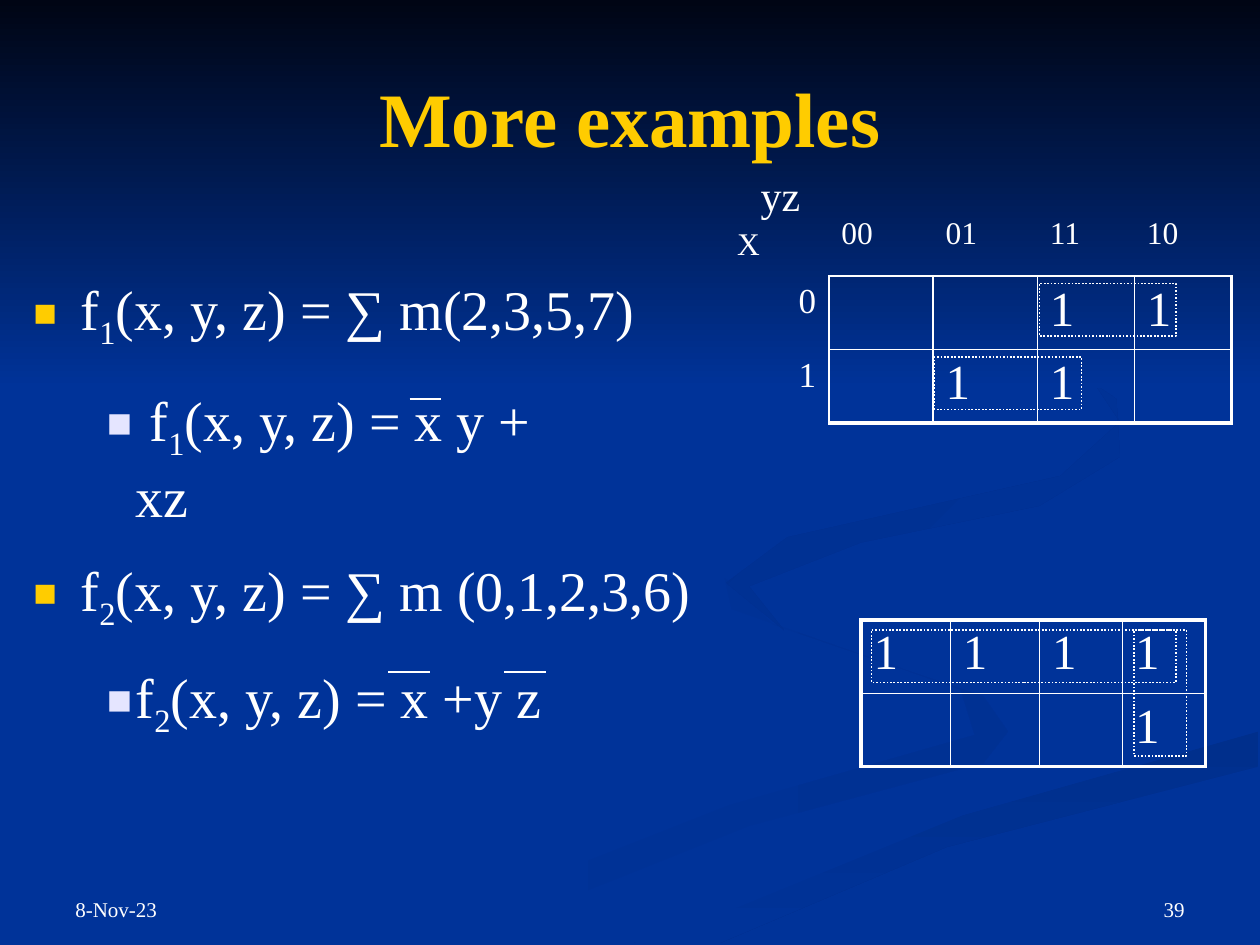
from lxml import etree
from pptx import Presentation
from pptx.dml.color import RGBColor
from pptx.enum import dml, shapes, text
from pptx.oxml.ns import qn
from pptx.util import Pt

FONT = "Times New Roman"
WHITE, GOLD, LAVENDER, BLUE, NIGHT = "FFFFFF", "FFCC00", "E5E5FF", "003399", "000514"
TOP, MIDDLE, BOTTOM = text.MSO_ANCHOR.TOP, text.MSO_ANCHOR.MIDDLE, text.MSO_ANCHOR.BOTTOM
LEFT, CENTER, RIGHT = text.PP_ALIGN.LEFT, text.PP_ALIGN.CENTER, text.PP_ALIGN.RIGHT
WIDTH, HEIGHT = 720, 540

# Backdrop bands: first colour, last colour, clockwise angle, outline
BACKDROP = [
    (BLUE, "003193", 0, [
        (562, 398), (442, 357), (414, 330), (418, 348), (549, 394), (557, 420), (417, 460),
        (216, 539), (260, 539), (428, 472), (562, 436), (576, 418)]),
    ("002F8C", BLUE, 90, [
        (362, 539), (411, 539), (541, 484), (719, 438), (719, 418), (550, 466)]),
    (BLUE, BLUE, 0, [
        (522, 334), (571, 366), (679, 410), (607, 445), (477, 481), (343, 539), (374, 538),
        (550, 466), (719, 418), (719, 387), (588, 354), (576, 318), (719, 279), (554, 307)]),
    ("002F8E", BLUE, 45, [
        (492, 310), (594, 289), (640, 261), (638, 228), (549, 168), (616, 205), (640, 241),
        (606, 272), (450, 307), (415, 333), (448, 360), (428, 335)]),
    (NIGHT, BLUE, 90, [(0, 0), (0, 222), (WIDTH, 222), (WIDTH, 0)]),
]

# Labels: text, box, size, colour, bold, alignment, anchor
LABELS = [
    ("8-Nov-23", (36, 492, 84, 38), 12, WHITE, False, LEFT, BOTTOM),
    ("39", (576, 492, 108, 38), 12, WHITE, False, RIGHT, BOTTOM),
    ("More examples", (0, 21.6, WIDTH, 90), 44, GOLD, True, CENTER, MIDDLE),
]

# Formulas: box, bullet colour, bullet size %, indent, gap, (name, subscript, rest)
FORMULAS = [
    ((12, 153.4, 696, 356), GOLD, 70, 27, 116.8,
     [("f", "1", "(x, y, z) = ∑ m(2,3,5,7)"), ("f", "2", "(x, y, z) = ∑ m (0,1,2,3,6)")]),
    ((54, 216.7, 290, 45.4), LAVENDER, 75, 16.5, 0, [(" f", "1", "(x, y, z) = x y + xz")]),
    ((54, 375, 267, 45.4), LAVENDER, 75, 16.5, 0, [("f", "2", "(x, y, z) = x +y z")]),
]
NEGATION_BARS = [(234, 252, 228), (222, 246, 384), (288, 312, 384)]  # x1, x2, y

MAP_ROW = 42
F1_MAP = {"at": (414, 95.8), "cols": [59.6] * 3 + [55.5] * 2, "rows": [62, MAP_ROW, MAP_ROW]}
F1_COLUMNS = ["00", "01", "11", "10"]
F1_ROWS = [("0", ["", "", "1", "1"]), ("1", ["", "1", "1", ""])]
F2_MAP = {"at": (492, 354.2), "cols": [51] * 2 + [47.5] * 2, "rows": [MAP_ROW] * 2}
F2_ROWS = [["1", "1", "1", "1"], ["", "", "", "1"]]
LOOPS = [(594, 162, 78, 30), (534, 204, 84, 30), (498, 360, 174, 30), (648, 360, 30, 72)]
THIN, THICK = 1, 2.25


def rgb(value):
    return RGBColor.from_string(value)


def style(font, size, color=WHITE, bold=False):
    font.name, font.size, font.bold = FONT, Pt(size), bold
    font.color.rgb = rgb(color)


def add_band(slide, first, last, angle, outline):
    builder = slide.shapes.build_freeform(*outline[0], scale=Pt(1))
    builder.add_line_segments(outline[1:], close=True)
    band = builder.convert_to_shape()
    band.shadow.inherit = False
    band.line.fill.background()
    if first == last:
        band.fill.solid()
        band.fill.fore_color.rgb = rgb(first)
        return
    band.fill.gradient()
    band.fill.gradient_angle = -angle % 360
    for stop, color in zip(band.fill.gradient_stops, (first, last)):
        stop.color.rgb = rgb(color)


def add_text_frame(slide, box, anchor=TOP):
    frame = slide.shapes.add_textbox(*map(Pt, box)).text_frame
    frame.word_wrap, frame.vertical_anchor = True, anchor
    return frame


def set_bullet(paragraph, color, percent, indent):
    props = paragraph._p.get_or_add_pPr()
    props.set("marL", str(Pt(indent)))
    props.set("indent", str(-Pt(indent)))
    bullet_color = etree.SubElement(props, qn("a:buClr"))
    etree.SubElement(bullet_color, qn("a:srgbClr"), val=color)
    etree.SubElement(props, qn("a:buSzPct"), val=str(percent * 1000))
    etree.SubElement(props, qn("a:buFont"), typeface=FONT)
    etree.SubElement(props, qn("a:buChar"), char="■")


def add_formulas(slide, box, color, percent, indent, gap, formulas):
    frame = add_text_frame(slide, box)
    for i, (name, subscript, rest) in enumerate(formulas):
        line = frame.add_paragraph() if i else frame.paragraphs[0]
        if i:
            line.space_before = Pt(gap)
        set_bullet(line, color, percent, indent)
        style(line.font, 32)
        for part in (name, subscript, rest):
            run = line.add_run()
            run.text = part
            style(run.font, 32)
            if part == subscript:
                run.font._element.set("baseline", "-25000")


def add_table(slide, at, cols, rows):
    frame = slide.shapes.add_table(len(rows), len(cols), *map(Pt, (*at, sum(cols), sum(rows))))
    table = frame.table
    table.first_row = table.horz_banding = False
    for column, width in zip(table.columns, cols):
        column.width = Pt(width)
    for row, height in zip(table.rows, rows):
        row.height = Pt(height)
    return table


def fill_cell(cell, value, size, borders, align=LEFT):
    """Borders are widths for left, right, top and bottom; 0 draws none."""
    props = cell._tc.get_or_add_tcPr()
    for side, width in zip("LRTB", borders):
        edge = etree.SubElement(props, qn("a:ln" + side), w=str(Pt(width)))
        if width:
            paint = etree.SubElement(edge, qn("a:solidFill"))
            etree.SubElement(paint, qn("a:srgbClr"), val=WHITE)
        else:
            etree.SubElement(edge, qn("a:noFill"))
    cell.fill.background()
    cell.text = value
    for paragraph in cell.text_frame.paragraphs:
        paragraph.alignment = align
        style(paragraph.font, size)


def fill_minterms(table, minterms, first_row, first_col, left_top):
    """Writes the 1s; the right and bottom outer edges are thick."""
    last_row, last_col = len(minterms) - 1, len(minterms[0]) - 1
    for r, row in enumerate(minterms):
        for c, value in enumerate(row):
            borders = (THIN if c else left_top, THICK if c == last_col else THIN,
                       THIN if r else left_top, THICK if r == last_row else THIN)
            fill_cell(table.cell(r + first_row, c + first_col), value, 28, borders)


prs = Presentation()
prs.slide_width, prs.slide_height = Pt(WIDTH), Pt(HEIGHT)
slide = prs.slides.add_slide(prs.slide_layouts[6])
slide.background.fill.solid()
slide.background.fill.fore_color.rgb = rgb(BLUE)

for band in BACKDROP:
    add_band(slide, *band)
for words, box, size, color, bold, align, anchor in LABELS:
    label = add_text_frame(slide, box, anchor).paragraphs[0]
    label.text, label.alignment = words, align
    style(label.font, size, color, bold)
for formula in FORMULAS:
    add_formulas(slide, *formula)

f1_map = add_table(slide, **F1_MAP)
corner = f1_map.cell(0, 0)
fill_cell(corner, "yz\nX", 18, (0, 0, 0, 0))
yz, x = corner.text_frame.paragraphs
yz.font.size, x.space_before = Pt(24), Pt(4)
yz._p.get_or_add_pPr().set("marL", str(Pt(13.5)))
for c, heading in enumerate(F1_COLUMNS, 1):
    fill_cell(f1_map.cell(0, c), heading, 18, (0, 0, 0, THIN))
    f1_map.cell(0, c).margin_top = Pt(27.6)
for r, (heading, _) in enumerate(F1_ROWS, 1):
    fill_cell(f1_map.cell(r, 0), heading, 20, (0, THIN, 0, 0), RIGHT)
fill_minterms(f1_map, [ones for _, ones in F1_ROWS], 1, 1, THIN)
fill_minterms(add_table(slide, **F2_MAP), F2_ROWS, 0, 0, THICK)

for box in LOOPS:
    loop = slide.shapes.add_shape(shapes.MSO_SHAPE.RECTANGLE, *map(Pt, box))
    loop.shadow.inherit = False
    loop.fill.background()
    loop.line.color.rgb, loop.line.width = rgb(WHITE), Pt(1)
    loop.line.dash_style = dml.MSO_LINE.ROUND_DOT
for x1, x2, y in NEGATION_BARS:
    bar = slide.shapes.add_connector(shapes.MSO_CONNECTOR.STRAIGHT, *map(Pt, (x1, y, x2, y)))
    bar.line.color.rgb, bar.line.width = rgb(WHITE), Pt(0.75)
    etree.SubElement(bar._element.spPr, qn("a:effectLst"))

prs.save("out.pptx")
